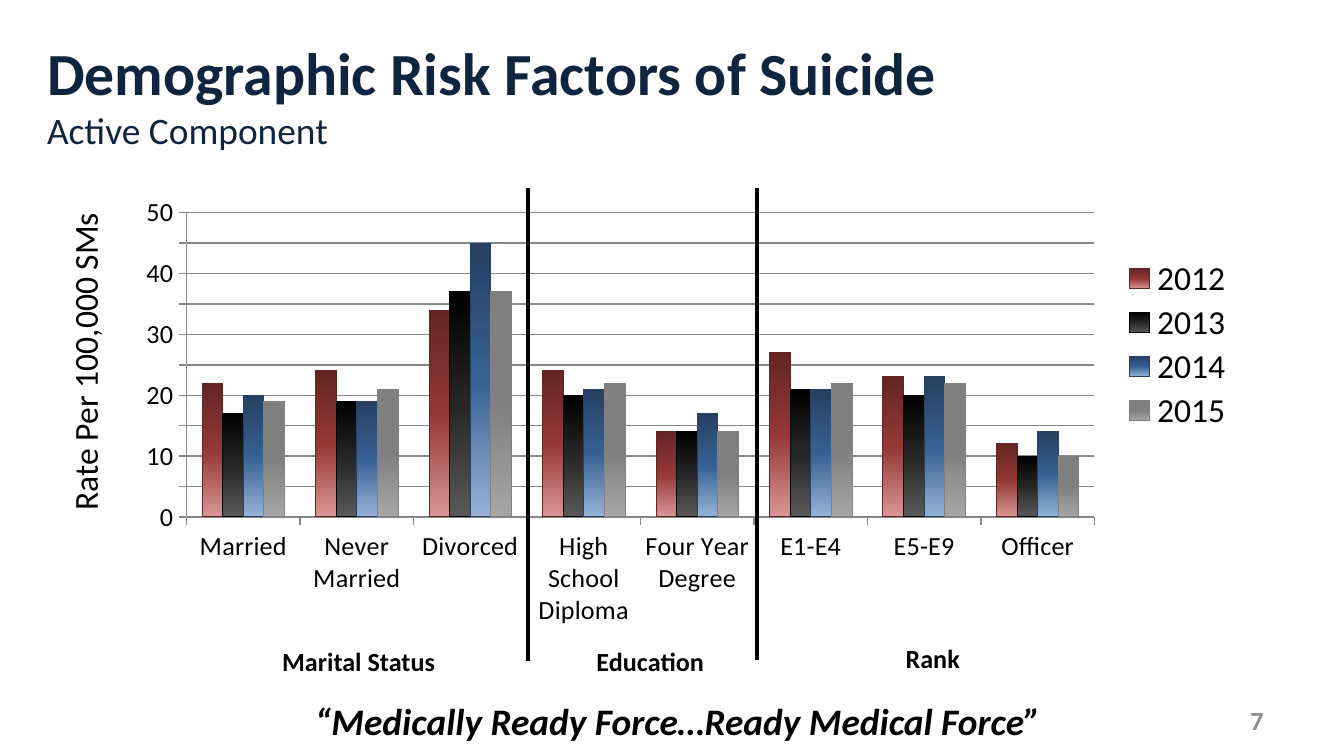
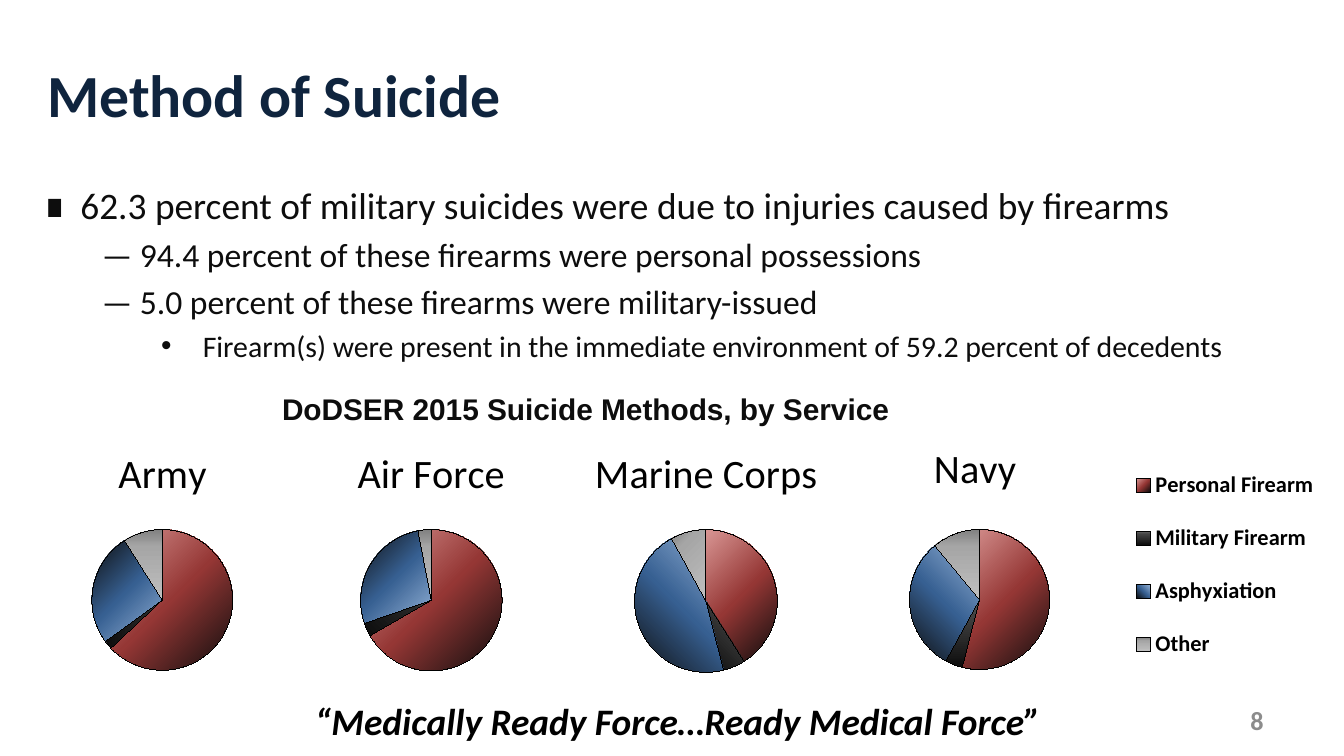
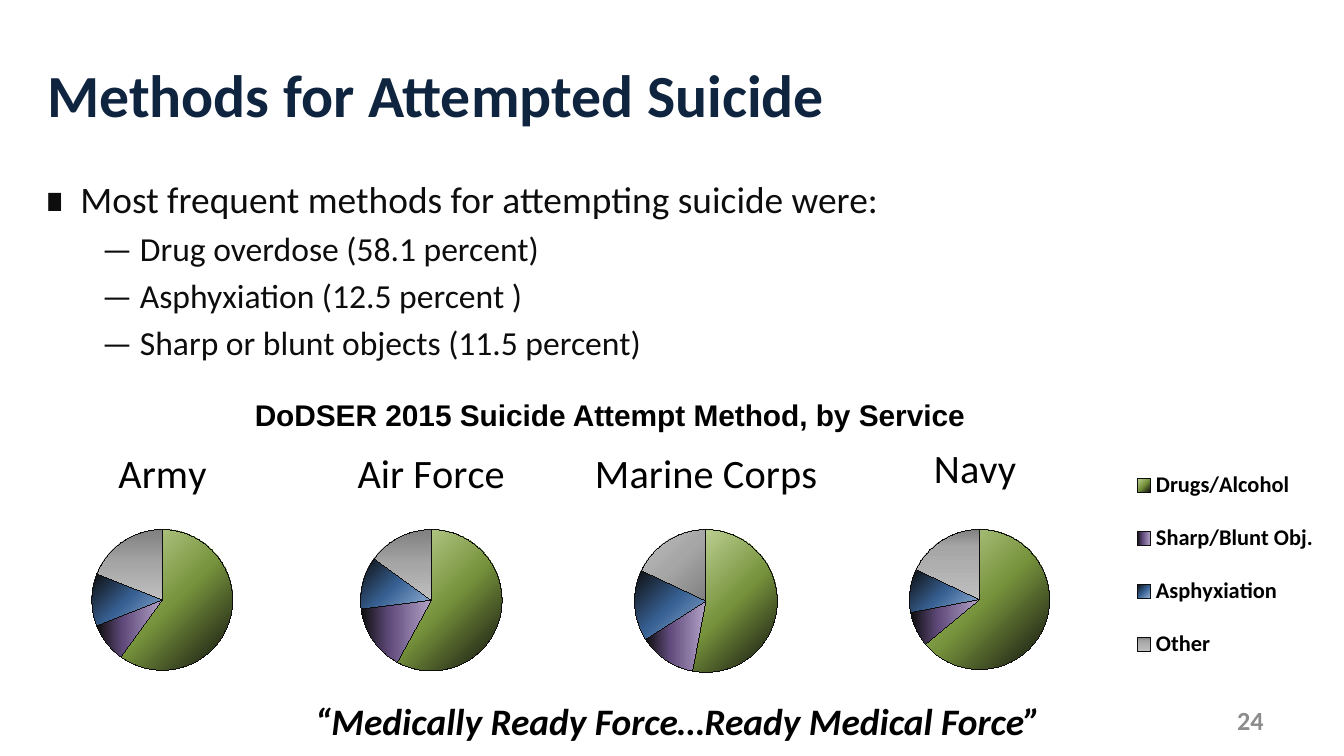
from dataclasses import dataclass

from lxml import etree
from pptx import Presentation
from pptx.chart.data import CategoryChartData as ChartData
from pptx.dml.color import RGBColor as RGB
from pptx.enum.chart import XL_CHART_TYPE as Kind
from pptx.enum.chart import XL_LEGEND_POSITION as Side
from pptx.enum.chart import XL_TICK_MARK as Tick
from pptx.enum.shapes import MSO_CONNECTOR as Link
from pptx.enum.text import MSO_ANCHOR as Anchor
from pptx.enum.text import MSO_AUTO_SIZE as Fit
from pptx.enum.text import PP_ALIGN as Align
from pptx.oxml import parse_xml
from pptx.oxml.ns import nsdecls, qn
from pptx.util import Inches, Pt


@dataclass(frozen=True)
class Theme:
    font: str = "Calibri"
    sans: str = "Arial"
    navy: str = "0F243E"
    black: str = "000000"
    ink: str = "0D0D0D"
    gray: str = "8C8C8C"
    grid: str = "868686"
    title: float = 32
    lead: float = 20
    name: float = 21.6
    base: float = 18
    head: float = 16
    note: float = 14
    key: float = 12


T = Theme()

# Content: shared parts
MOTTO = "“Medically Ready Force…Ready Medical Force”"

# Gradients: start, middle position, middle, end
GRADS = {
    "2012": ("632523", 50, "953735", "D99694"),
    "2013": ("000000", 50, "262626", "595959"),
    "2014": ("254061", 50, "376092", "95B3D7"),
    "2015": ("808080", 50, "808080", "A6A6A6"),
    "red": ("0D0D0D", 50, "953735", "D99694"),
    "coal": ("0D0D0D", 75, "262626", "595959"),
    "slate": ("0D0D0D", 75, "404040", "595959"),
    "blue": ("0D0D0D", 50, "376092", "95B3D7"),
    "ash": ("808080", 25, "A6A6A6", "BFBFBF"),
    "fog": ("808080", 50, "A6A6A6", "BFBFBF"),
    "green": ("0D0D0D", 50, "77933C", "C3D69B"),
    "plum": ("0D0D0D", 40, "604A7B", "B3A2C7"),
}

# Content: rates by group
GROUPS = ["Married", "Never Married", "Divorced", "High School Diploma",
          "Four Year Degree", "E1-E4", "E5-E9", "Officer"]
RATES = {
    "2012": (22, 24, 34, 24, 14, 27, 23, 12),
    "2013": (17, 19, 37, 20, 14, 21, 20, 10),
    "2014": (20, 19, 45, 21, 17, 21, 23, 14),
    "2015": (19, 21, 37, 22, 14, 22, 22, 10),
}
LABELS = [("Marital Status", (2, 4.75, 1.59, 0.34)),
          ("Education", (4.34, 4.75, 1.16, 0.34)),
          ("Rank", (6.64, 4.73, 0.77, 0.34))]
RULES = [(3.93, 4.92), (5.63, 4.91)]

# Content: pie slides; places of the pies as left, width, height
SPOTS = {"Marine Corps": (3.17, 4.17, 1.99), "Air Force": (0.92, 4.58, 1.97),
         "Navy": (5.75, 4.58, 1.95), "Army": (-0.83, 4.08, 1.96)}
PIES = [
    {"title": "Method of Suicide", "page": "8", "top": 1.31,
     "body": [
         (0, "62.3 percent of military suicides were due to injuries "
             "caused by firearms"),
         (1, "— 94.4 percent of these firearms were personal possessions"),
         (1, "— 5.0 percent of these firearms were military-issued"),
         (2, "Firearm(s) were present in the immediate environment of "
             "59.2 percent of decedents")],
     "head": ("DoDSER 2015 Suicide Methods, by Service",
              (2, 2.86, 5.92, 0.37), Align.LEFT, T.ink),
     "keys": ["Personal Firearm", "Military Firearm", "Asphyxiation", "Other"],
     "line": T.black,
     "pies": {
         "Marine Corps": ((41, 5, 46, 8), "red slate blue ash",
                          (225, 315, 315, 45)),
         "Air Force": ((66, 3, 27, 3), "red coal blue ash",
                       (225, 315, 45, 90)),
         "Navy": ((54, 4, 31, 11), "red slate blue ash",
                  (225, 270, 315, 90)),
         "Army": ((63, 2, 26, 9), "red coal blue ash", (225, 0, 45, 90))}},
    {"title": "Methods for Attempted Suicide", "page": "24", "top": 1.26,
     "body": [
         (0, "Most frequent methods for attempting suicide were:"),
         (1, "— Drug overdose (58.1 percent)"),
         (1, "— Asphyxiation (12.5 percent )"),
         (1, "— Sharp or blunt objects (11.5 percent)")],
     "head": ("DoDSER 2015 Suicide Attempt Method, by Service",
              (1.08, 2.9, 6.92, 0.37), Align.CENTER, T.black),
     "keys": ["Drugs/Alcohol", "Sharp/Blunt Obj.", "Asphyxiation", "Other"],
     "line": T.ink,
     "pies": {
         "Marine Corps": ((53, 13, 16, 18), "green plum blue fog",
                          (225, 0, 45, 225)),
         "Air Force": ((58, 15, 12, 15), "green plum blue fog",
                       (225, 0, 45, 90)),
         "Navy": ((64, 8, 10, 18), "green plum blue ash", (225, 0, 45, 90)),
         "Army": ((60, 9, 12, 19), "green plum blue fog",
                  (225, 0, 45, 90))}},
]

# Body levels: size, left margin, indent, bullet
LEVELS = [(T.lead, 0.28, -0.28, "∎"), (T.base, 0.44, 0, None),
          (T.head, 1.19, -0.31, "•")]


# Helpers
def put(obj, **vals):
    for key, val in vals.items():
        setattr(obj, key, val)


def style(font, size, color=T.black, name=T.font, bold=False, italic=False):
    put(font, size=Pt(size), name=name, bold=bold, italic=italic)
    font.color.rgb = RGB.from_string(color)


def inch(box):
    return [Inches(v) for v in box]


def text(slide, words, box, size, align=Align.LEFT, anchor=Anchor.TOP, **look):
    shape = slide.shapes.add_textbox(*inch(box))
    frame = shape.text_frame
    put(frame, word_wrap=True, vertical_anchor=anchor)
    par = frame.paragraphs[0]
    par.alignment = align
    run = par.add_run()
    run.text = words
    style(run.font, size, **look)
    return shape


def page(deck, title, num, sub=None):
    slide = deck.slides.add_slide(deck.slide_layouts[5])
    head = slide.shapes.title
    put(head, **dict(zip(("left", "top", "width", "height"),
                         inch((0.25, 0.23, 7.42, 0.94)))))
    frame = head.text_frame
    put(frame, word_wrap=True, auto_size=Fit.NONE,
        vertical_anchor=Anchor.MIDDLE)
    par = frame.paragraphs[0]
    par.alignment = Align.LEFT
    run = par.add_run()
    run.text = title
    style(run.font, T.title, T.navy, bold=True)
    if sub:
        par.add_line_break()
        run = par.add_run()
        run.text = sub
        style(run.font, T.lead, T.navy)
    text(slide, MOTTO, (1.92, 5.21, 6.25, 0.3), T.lead, Align.CENTER,
         Anchor.MIDDLE, bold=True, italic=True)
    text(slide, num, (8.33, 5.21, 1.17, 0.3), T.note, Align.RIGHT,
         Anchor.MIDDLE, bold=True, color=T.gray)
    return slide


def layout(part, spot, **box):
    """Place a chart part by fractions of the chart."""
    for old in part.findall(qn("c:layout")):
        part.remove(old)
    rows = "".join(f'<c:{k}Mode val="edge"/>' for k in "xy")
    rows += "".join(f'<c:{k} val="{v:.3f}"/>' for k, v in box.items())
    if spot == 0:
        rows = '<c:layoutTarget val="inner"/>' + rows
    part.insert(spot, parse_xml(
        f'<c:layout {nsdecls("c")}><c:manualLayout>{rows}'
        '</c:manualLayout></c:layout>'))


def paint(form, grad, angle, line):
    start, mid, color, end = GRADS[grad]
    stops = "".join(
        f'<a:gs pos="{pos * 1000}"><a:srgbClr val="{val}"/></a:gs>'
        for pos, val in ((0, start), (mid, color), (100, end)))
    form.line.color.rgb = RGB.from_string(line)
    form._element.get_or_add_spPr().insert(0, parse_xml(
        f'<a:gradFill {nsdecls("a")} rotWithShape="1"><a:gsLst>{stops}'
        f'</a:gsLst><a:lin ang="{angle * 60000}" scaled="0"/></a:gradFill>'))


def graph(slide, kind, cats, series, box):
    data = ChartData()
    data.categories = cats
    for name, vals in series.items():
        data.add_series(name, vals)
    chart = slide.shapes.add_chart(kind, *inch(box), data).chart
    style(chart.font, T.base)
    chart._chartSpace.find(qn("c:chart")).addnext(parse_xml(
        f'<c:spPr {nsdecls("c", "a")}><a:noFill/>'
        '<a:ln><a:noFill/></a:ln></c:spPr>'))
    return chart


def legend(chart, size, bold, **box):
    chart.has_legend = True
    put(chart.legend, position=Side.RIGHT, include_in_layout=False)
    style(chart.legend.font, size, bold=bold)
    layout(chart.legend._element, 1, **box)


def area(chart):
    return chart._chartSpace.find(".//" + qn("c:plotArea"))


# Slide with columns
def columns(deck):
    slide = page(deck, "Demographic Risk Factors of Suicide", "7",
                 "Active Component")
    chart = graph(slide, Kind.COLUMN_CLUSTERED, GROUPS, RATES,
                  (0.93, 1.4, 8.34, 3.33))
    chart.has_title = False
    plot = chart.plots[0]
    put(plot, gap_width=150, overlap=0, vary_by_categories=False)
    for ser in plot.series:
        paint(ser.format, ser.name, 90, GRADS[ser.name][0])
    rate = chart.value_axis
    put(rate, minimum_scale=0, maximum_scale=50, major_unit=5,
        has_major_gridlines=True)
    for axis in (chart.category_axis, rate):
        put(axis, major_tick_mark=Tick.OUTSIDE, minor_tick_mark=Tick.NONE)
        style(axis.tick_labels.font, T.note)
    for form in (chart.category_axis.format, rate.format,
                 rate.major_gridlines.format):
        form.line.color.rgb = RGB.from_string(T.grid)
    layout(area(chart), 0, x=0.055, y=0.055, w=0.81, h=0.68)
    legend(chart, T.base, False, x=0.884, y=0.15, w=0.11, h=0.4)

    # Group names, axis name and dividers
    for words, box in LABELS:
        text(slide, words, box, T.note, bold=True)
    side = text(slide, "Rate Per 100,000 SMs", (-0.66, 2.49, 2.58, 0.4),
                T.base, Align.CENTER)
    side.rotation = 270
    for x, end in RULES:
        rule = slide.shapes.add_connector(Link.STRAIGHT,
                                          *inch((x, 1.4, x, end)))
        rule.line.width = Pt(2.25)
        rule.line.color.rgb = RGB.from_string(T.black)
        etree.SubElement(rule._element.spPr, qn("a:effectLst"))


# Slides with pies
def bullets(slide, rows, top):
    frame = slide.shapes.add_textbox(*inch((0.22, top, 9.78, 3.4))).text_frame
    frame.word_wrap = True
    for i, (level, words) in enumerate(rows):
        par = frame.add_paragraph() if i else frame.paragraphs[0]
        size, left, dent, mark = LEVELS[level]
        prop = par._p.get_or_add_pPr()
        prop.set("marL", str(Inches(left)))
        prop.set("indent", str(Inches(dent)))
        if mark:
            etree.SubElement(prop, qn("a:buFont")).set("typeface", T.sans)
            etree.SubElement(prop, qn("a:buChar")).set("char", mark)
        else:
            etree.SubElement(prop, qn("a:buNone"))
        par.level = level
        par.space_before = Pt(size * 0.2 if i else 0)
        run = par.add_run()
        run.text = words
        style(run.font, size, T.ink)


def pie(slide, name, item):
    left, wide, high = SPOTS[name]
    vals, grads, turns = item["pies"][name]
    keyed = name == "Navy"
    cats = item["keys"] if keyed else list("1234")
    chart = graph(slide, Kind.PIE, cats, {name: vals},
                  (left, 3.16, wide, high))
    chart.has_title = True
    run = chart.chart_title.text_frame.paragraphs[0].add_run()
    run.text = name
    style(run.font, T.name)
    ser = chart.plots[0].series[0]
    ser.format.line.color.rgb = RGB.from_string(item["line"])
    for i, (grad, turn) in enumerate(zip(grads.split(), turns)):
        paint(ser.points[i].format, grad, turn, item["line"])
    size = 0.535 * high
    mid = 1.54 if keyed else wide / 2
    layout(area(chart), 0, x=(mid - size / 2) / wide, y=0.78 / high,
           w=size / wide, h=size / high)
    chart.has_legend = False
    if keyed:
        layout(chart.chart_title._element, 1, x=0.25, y=0.03)
        legend(chart, T.key, True, x=0.58, y=0.08, w=0.31, h=0.91)


def pies(deck, item):
    slide = page(deck, item["title"], item["page"])
    bullets(slide, item["body"], item["top"])
    words, box, align, color = item["head"]
    text(slide, words, box, T.head, align, color=color, name=T.sans, bold=True)
    for name in SPOTS:
        pie(slide, name, item)


def main():
    deck = Presentation()
    wide = Inches(10)
    put(deck, slide_width=wide, slide_height=wide * 9 // 16)
    columns(deck)
    for item in PIES:
        pies(deck, item)
    deck.save("out.pptx")


if __name__ == "__main__":
    main()
